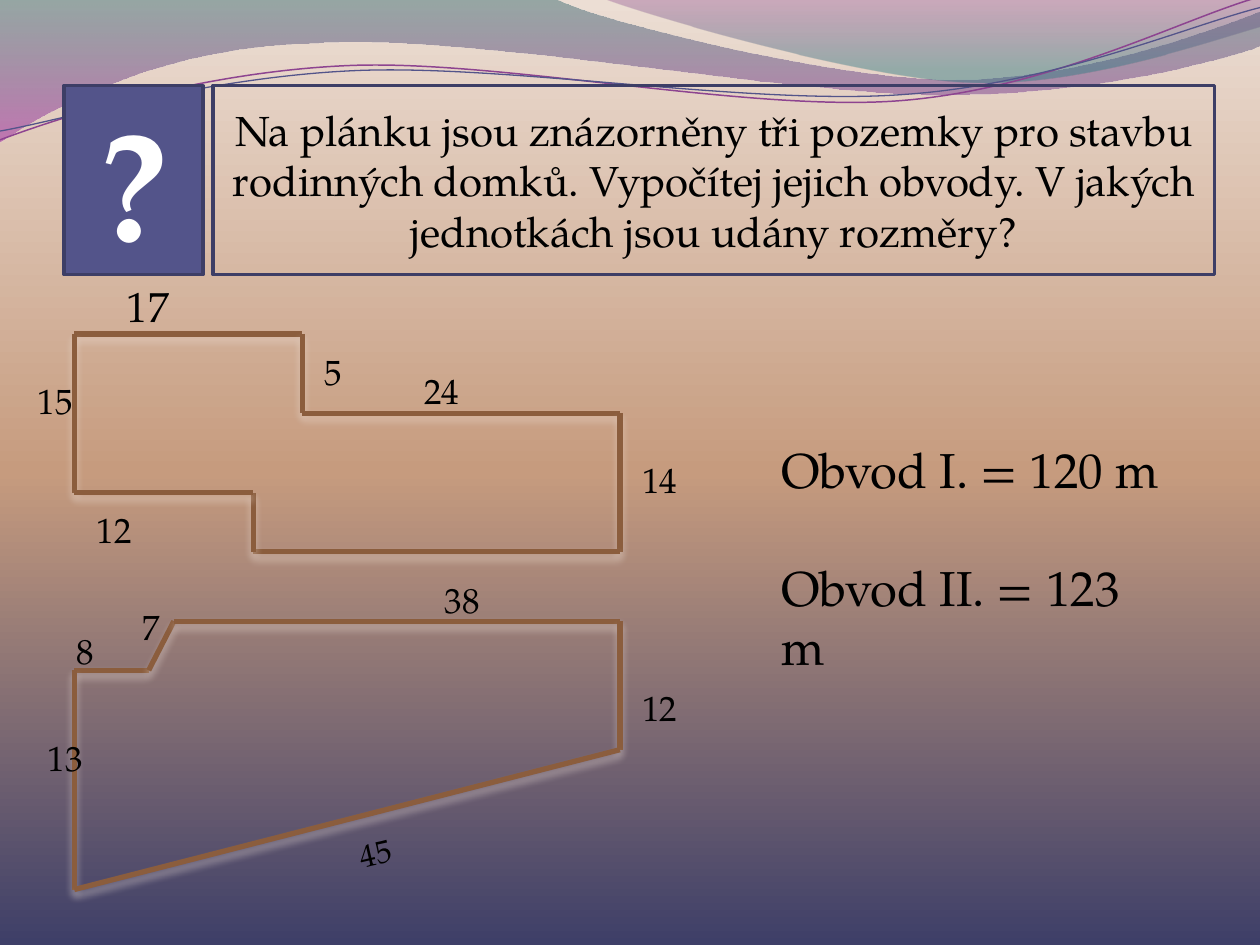
import math

import pptx
import pptx.util
import pptx.dml.color
import pptx.enum.shapes
import pptx.enum.text
import pptx.oxml
import pptx.oxml.ns

Inches, Pt = pptx.util.Inches, pptx.util.Pt
RGBColor = pptx.dml.color.RGBColor
MSO_SHAPE = pptx.enum.shapes.MSO_SHAPE
MSO_CONNECTOR = pptx.enum.shapes.MSO_CONNECTOR
MSO_ANCHOR = pptx.enum.text.MSO_ANCHOR
MSO_AUTO_SIZE = pptx.enum.text.MSO_AUTO_SIZE
PP_ALIGN = pptx.enum.text.PP_ALIGN

FONT = "TeX Gyre Pagella"
NS = pptx.oxml.ns.nsdecls("a")
BLACK = RGBColor(0x00, 0x00, 0x00)
WHITE = RGBColor(0xFF, 0xFF, 0xFF)
INDIGO = RGBColor(0x53, 0x54, 0x8A)
DARK_INDIGO = RGBColor(0x3D, 0x3E, 0x66)
NIGHT = RGBColor(0x3E, 0x3F, 0x68)
PURPLE = RGBColor(0x8D, 0x44, 0x90)
VIOLET = RGBColor(0xA5, 0x30, 0xA9)
PLUM = RGBColor(0x7F, 0x2F, 0x82)
TEAL = RGBColor(0x2D, 0x63, 0x68)
LIGHT_TEAL = RGBColor(0x2F, 0x7B, 0x82)
CREAM = RGBColor(0xEC, 0xDE, 0xD4)
COPPER = RGBColor(0xC6, 0x9B, 0x7E)
BROWN = RGBColor(0x8B, 0x5D, 0x3D)
GLOW = RGBColor(0xF0, 0xE4, 0xDC)

# Each wave is a start point and segments: one point is a line, three are a cubic curve.
WAVE_LEFT = ((0, 0), [
    [(4.4, -0.01)],
    [(4.76, 0.17), (6.64, 0.63), (7.58, 0.63)],
    [(8.53, 0.63), (9.58, 0.26), (10, 0.09)],
    [(10.01, 0.36)],
    [(9.83, 0.44), (8.7, 0.76), (7.46, 0.75)],
    [(6.22, 0.75), (3.82, 0.28), (2.57, 0.34)],
    [(1.29, 0.36), (0.46, 0.83), (-0.01, 1.13)],
    [(0, 0)]])
WAVE_RIGHT = ((4.79, -0.01), [
    [(5.09, 0.11), (6.82, 0.62), (7.69, 0.65)],
    [(8.56, 0.69), (9.61, 0.32), (10, 0.21)],
    [(10, 0)],
    [(4.79, -0.01)]])
PURPLE_STRAND = ((0, 1.11), [
    [(0.48, 0.93), (1.58, 0.57), (2.77, 0.52)],
    [(3.95, 0.47), (5.93, 0.89), (7.13, 0.8)],
    [(8.33, 0.71), (9.38, 0.15), (9.98, -0.02)]])
INDIGO_STRAND = ((0, 1.04), [
    [(0.47, 0.96), (1.64, 0.61), (2.83, 0.56)],
    [(4.03, 0.51), (5.97, 0.84), (7.17, 0.75)],
    [(8.36, 0.67), (9.41, 0.21), (10, 0.06)]])
STRAND_TILT = -2.7

# The upper and the lower boundary of each plot, from left to right
BOUNDARIES = [
    [(0.59, 2.65), (2.4, 2.65), (2.4, 3.28), (4.92, 3.28),
     (4.92, 4.38), (2.01, 4.38), (2.01, 3.91)],
    [(0.59, 2.65), (0.59, 3.91), (2.01, 3.91)],
    [(0.59, 5.32), (1.18, 5.32), (1.38, 4.93), (4.92, 4.93), (4.92, 5.95)],
    [(0.59, 5.32), (0.59, 7.06), (4.92, 5.95)],
]

# text, left, top, width, height, size, rotation
LENGTHS = [
    ("17", 0.91, 2.18, 1.1, 0.5, 24, 0),
    ("5", 2.48, 2.73, 0.63, 0.44, 20, 0),
    ("24", 3.27, 2.88, 1.34, 0.44, 20, 0),
    ("14", 5, 3.59, 0.71, 0.44, 20, 0),
    ("12", 0.67, 3.99, 0.87, 0.44, 20, 0),
    ("15", 0.2, 2.96, 0.67, 0.44, 20, 0),
    ("12", 5, 5.4, 0.63, 0.44, 20, 0),
    ("45", 2.74, 6.44, 1.57, 0.4, 18, 346.8),
    ("38", 3.43, 4.54, 1.02, 0.44, 20, 0),
    ("7", 1.03, 4.76, 0.79, 0.44, 20, 0),
    ("13", 0.28, 5.8, 0.91, 0.44, 20, 0),
]


def write(tf, text, size, color=BLACK, bold=False, align=PP_ALIGN.LEFT, gap=0):
    """Fill a text frame, one paragraph per line of text, with gap points between."""
    tf.word_wrap = True
    for i, line in enumerate(text.split("\n")):
        p = tf.add_paragraph() if i else tf.paragraphs[0]
        p.alignment = align
        if i:
            p.space_before = Pt(gap)
        r = p.add_run()
        r.text = line
        r.font.name, r.font.size, r.font.bold = FONT, Pt(size), bold
        r.font.color.rgb = color


def set_gradient(fill, element, stops):
    """Give a top-to-bottom gradient; stops are (percent, colour, opacity percent)."""
    fill.gradient()
    grad = element.xpath(".//a:gradFill")[0]
    for child in list(grad):
        grad.remove(child)
    gs = "".join(
        f'<a:gs pos="{pos * 1000}"><a:srgbClr val="{color}">'
        f'<a:alpha val="{opacity * 1000}"/></a:srgbClr></a:gs>'
        for pos, color, opacity in stops)
    grad.append(pptx.oxml.parse_xml(f"<a:gsLst {NS}>{gs}</a:gsLst>"))
    grad.append(pptx.oxml.parse_xml(f'<a:lin {NS} ang="5400000" scaled="0"/>'))


def turn(point, degrees, center=(4.99, 0.58)):
    a = math.radians(degrees)
    dx, dy = point[0] - center[0], point[1] - center[1]
    return (center[0] + dx * math.cos(a) - dy * math.sin(a),
            center[1] + dx * math.sin(a) + dy * math.cos(a))


def bend(sp, segments):
    """Merge the line steps of each three-point segment into one cubic curve."""
    steps = iter(sp.element.xpath(".//a:path/a:lnTo"))
    for segment in segments:
        group = [next(steps) for _ in segment]
        if len(group) == 3:
            curve = pptx.oxml.parse_xml(f"<a:cubicBezTo {NS}/>")
            group[0].addprevious(curve)
            for step in group:
                curve.append(step[0])
                step.getparent().remove(step)


class Board:
    def __init__(self, s):
        self.s = s

    def background(self, stops):
        set_gradient(self.s.background.fill, self.s.element, stops)

    def wave(self, outline, stops=None, line=None, width=0, tilt=0):
        start, segments = outline
        corners = [start, *(c for segment in segments for c in segment)]
        points = [(Inches(x), Inches(y)) for x, y in (turn(c, -tilt) for c in corners)]
        builder = self.s.shapes.build_freeform(*points[0])
        builder.add_line_segments(points[1:], close=stops is not None)
        sp = builder.convert_to_shape()
        bend(sp, segments)
        sp.rotation = tilt
        sp.shadow.inherit = False
        if stops:
            set_gradient(sp.fill, sp.element, stops)
            sp.line.fill.background()
        else:
            sp.fill.background()
            sp.line.color.rgb, sp.line.width = line, Pt(width)

    def panel(self, text, left, width, fill=None, **fmt):
        sp = self.s.shapes.add_shape(MSO_SHAPE.RECTANGLE, Inches(left), Inches(0.68),
                                     Inches(width), Inches(1.5))
        sp.shadow.inherit = False
        if fill is None:
            sp.fill.background()
        else:
            sp.fill.solid()
            sp.fill.fore_color.rgb = fill
        sp.line.color.rgb, sp.line.width = DARK_INDIGO, Pt(2)
        sp.text_frame.vertical_anchor = MSO_ANCHOR.MIDDLE
        write(sp.text_frame, text, align=PP_ALIGN.CENTER, **fmt)

    def side(self, start, end):
        c = self.s.shapes.add_connector(MSO_CONNECTOR.STRAIGHT,
                                        *(Inches(v) for v in (*start, *end)))
        c.line.color.rgb, c.line.width = BROWN, Pt(3)
        c.element.spPr.append(pptx.oxml.parse_xml(
            f'<a:effectLst {NS}><a:outerShdw blurRad="{Pt(4.5)}" dist="{Pt(3)}" '
            f'dir="5400000" rotWithShape="0"><a:srgbClr val="{GLOW}">'
            '<a:alpha val="48000"/></a:srgbClr></a:outerShdw></a:effectLst>'))

    def label(self, text, left, top, width, height, size, rotation=0, gap=0):
        sp = self.s.shapes.add_textbox(Inches(left), Inches(top), Inches(width), Inches(height))
        sp.rotation = rotation
        sp.text_frame.auto_size = MSO_AUTO_SIZE.SHAPE_TO_FIT_TEXT
        write(sp.text_frame, text, size=size, gap=gap)


def main():
    prs = pptx.Presentation()
    prs.slide_width, prs.slide_height = Inches(10), Inches(7.5)
    board = Board(prs.slides.add_slide(prs.slide_layouts[6]))
    board.background([(0, CREAM, 100), (50, COPPER, 100), (100, NIGHT, 100)])
    board.wave(WAVE_LEFT, stops=[(0, TEAL, 45), (100, VIOLET, 55)])
    board.wave(WAVE_RIGHT, stops=[(0, PLUM, 30), (80, LIGHT_TEAL, 45)])
    board.wave(PURPLE_STRAND, line=PURPLE, width=0.85, tilt=STRAND_TILT)
    board.wave(INDIGO_STRAND, line=INDIGO, width=0.75, tilt=STRAND_TILT)
    board.panel("?", 0.51, 1.1, fill=INDIGO, size=88, color=WHITE, bold=True)
    board.panel("Na plánku jsou znázorněny tři pozemky pro stavbu rodinných domků. "
                "Vypočítej jejich obvody. V jakých jednotkách jsou udány rozměry?",
                1.69, 7.95, size=24)
    for corners in BOUNDARIES:
        for start, end in zip(corners, corners[1:]):
            board.side(start, end)
    for length in LENGTHS:
        board.label(*length)
    board.label("Obvod I. = 120 m\nObvod II. = 123 m", 6.1, 3.44, 3.31, 1.51, 28, gap=34)
    board.label("8", 0.51, 4.95, 0.51, 0.44, 20)
    prs.save("out.pptx")


if __name__ == "__main__":
    main()
